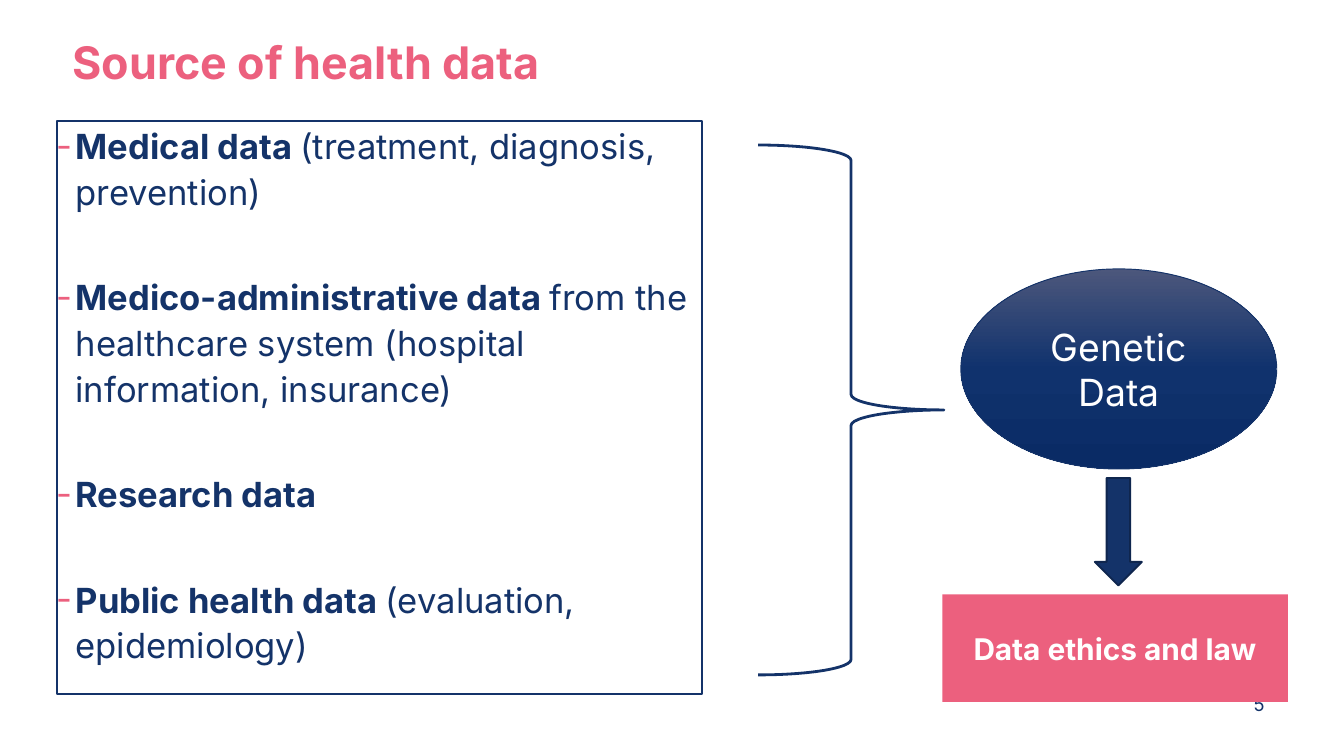
from copy import deepcopy

from lxml.etree import SubElement
from pptx import Presentation
from pptx.dml.color import RGBColor
from pptx.enum.shapes import MSO_SHAPE as Shape
from pptx.enum.text import MSO_ANCHOR as Anchor, MSO_AUTO_SIZE as AutoSize, PP_ALIGN as Align
from pptx.oxml.ns import qn
from pptx.util import Cm, Pt

COLORS = {"navy": "143369", "pink": "EC607E", "white": "FFFFFF", "edge": "0F264E"}
FONT = "Inter"
TITLE = "Source of health data"
SOURCES = [  # bold name, plain detail
    ("Medical data ", "(treatment, diagnosis, prevention)"),
    ("Medico-administrative data ",
     "from the healthcare system (hospital information, insurance)"),
    ("Research data", ""),
    ("Public health data ", "(evaluation, epidemiology)"),
]
GENETIC_STOPS = [(0, "4C577C"), (0.5, "10326D"), (1, "0A2B65")]
INDENT = 0.36


def rgb(name):
    return RGBColor.from_string(COLORS[name])


def place(s, left, top, width, height):
    s.left, s.top, s.width, s.height = map(Cm, (left, top, width, height))


def frame(s, anchor=Anchor.TOP):
    """Strip the margins of a shape's text frame and return it."""
    tf = s.text_frame
    tf.margin_left = tf.margin_top = tf.margin_right = tf.margin_bottom = 0
    tf.word_wrap, tf.auto_size, tf.vertical_anchor = True, AutoSize.NONE, anchor
    return tf


def add_text(p, text, size, color="navy", bold=False, align=Align.LEFT):
    p.alignment = align
    r = p.add_run()
    r.text = text
    r.font.name, r.font.size, r.font.bold = FONT, Pt(size), bold
    r.font.color.rgb = rgb(color)


def style(s, fill=None, line=None, width=1):
    if fill:
        s.fill.solid()
        s.fill.fore_color.rgb = rgb(fill)
    else:
        s.fill.background()
    if line:
        s.line.color.rgb = rgb(line)
        s.line.width = Pt(width)
    else:
        s.line.fill.background()


def add_shape(kind, box, **look):
    s = slide.shapes.add_shape(kind, *map(Cm, box))
    s.shadow.inherit = False
    style(s, **look)
    return s


def set_dash(p):
    """Give the paragraph a hanging pink dash."""
    pPr = p._p.get_or_add_pPr()
    pPr.set("marL", str(Cm(INDENT)))
    pPr.set("indent", str(-Cm(INDENT)))
    SubElement(SubElement(pPr, qn("a:buClr")), qn("a:srgbClr"), val=COLORS["pink"])
    SubElement(pPr, qn("a:buFont"), typeface=FONT)
    SubElement(pPr, qn("a:buChar"), char="-")


def set_gradient(s, stops):
    s.fill.gradient()
    s.fill.gradient_angle = 270
    gs_list = s._element.spPr.find(qn("a:gradFill")).find(qn("a:gsLst"))
    while len(gs_list) < len(stops):
        gs_list.append(deepcopy(gs_list[0]))
    for stop, (position, color) in zip(s.fill.gradient_stops, stops):
        stop.position = position
        stop.color.rgb = RGBColor.from_string(color)


prs = Presentation()
prs.slide_width, prs.slide_height = Cm(25.4), Cm(14.28)
slide = prs.slides.add_slide(prs.slide_layouts[1])
title, body = slide.placeholders

place(title, 1.37, 0.66, 22.43, 1.02)
add_text(frame(title).paragraphs[0], TITLE, 24, "pink", bold=True)

place(body, 1.07, 2.29, 12.19, 10.82)
style(body, fill="white", line="navy")
tf = frame(body)
for i, (name, detail) in enumerate(SOURCES):
    p = tf.add_paragraph() if i else tf.paragraphs[0]
    p.line_spacing = 1.1
    p.space_before = Pt(32 if i else 3.8)
    set_dash(p)
    add_text(p, name, 18.5, bold=True)
    if detail:
        add_text(p, detail, 18.5)

number = slide.shapes.add_textbox(Cm(21.84), Cm(13.08), Cm(2.06), Cm(1.19))
add_text(frame(number).paragraphs[0], "5", 10, align=Align.RIGHT)

genetic = add_shape(Shape.OVAL, (18.16, 5.08, 5.97, 3.78), line="navy", width=0.5)
set_gradient(genetic, GENETIC_STOPS)
add_text(genetic.text_frame.paragraphs[0], "Genetic Data", 20, "white", align=Align.CENTER)

add_shape(Shape.RIGHT_BRACE, (14.33, 2.74, 3.51, 10.01), line="navy", width=1.5)

arrow = add_shape(Shape.RIGHT_ARROW, (20.12, 9.6, 2.03, 0.89), fill="navy", line="edge")
arrow.rotation = 90

ethics = add_shape(Shape.RECTANGLE, (17.81, 11.23, 6.53, 2.03), fill="pink")
add_text(ethics.text_frame.paragraphs[0], "Data ethics and law", 16, "white",
         bold=True, align=Align.CENTER)

prs.save("out.pptx")
